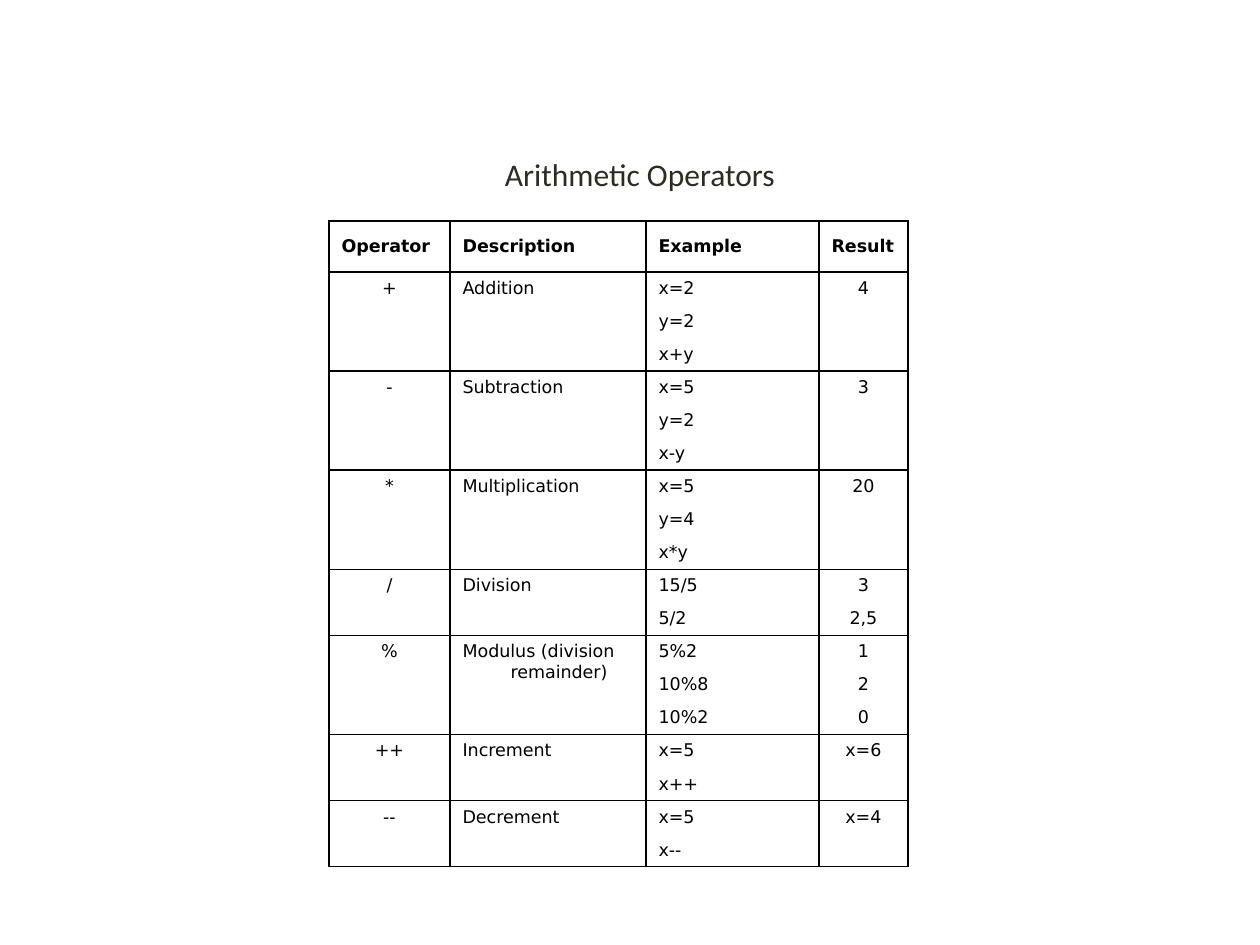
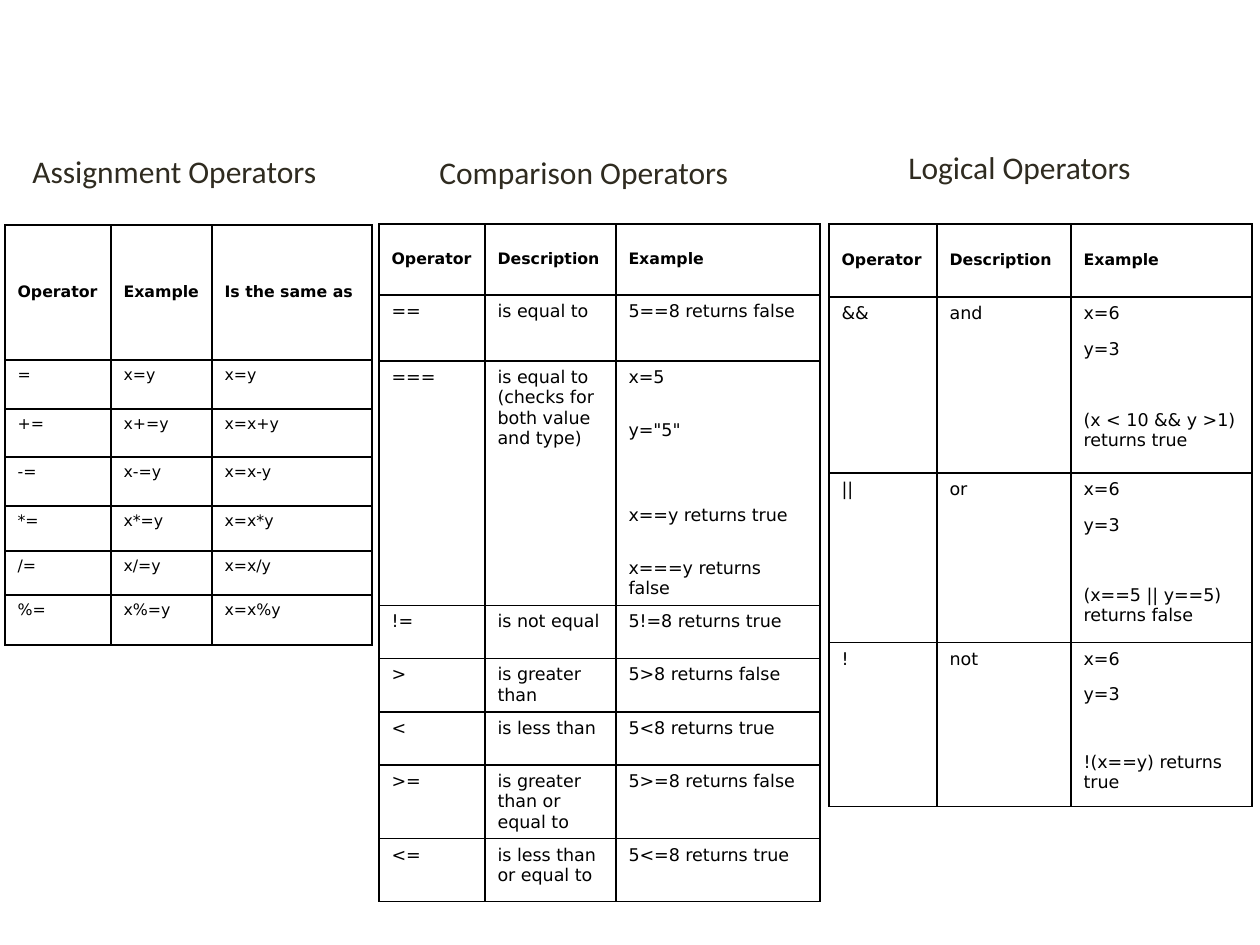
from dataclasses import dataclass

from lxml import etree
from pptx import Presentation
from pptx.dml.color import RGBColor
from pptx.enum.text import MSO_ANCHOR, MSO_AUTO_SIZE, PP_ALIGN
from pptx.oxml.ns import qn
from pptx.util import Emu, Pt

CENTER, LEFT = PP_ALIGN.CENTER, PP_ALIGN.LEFT
MIDDLE, TOP = MSO_ANCHOR.MIDDLE, MSO_ANCHOR.TOP
NO_FIT, FIT_SHAPE = MSO_AUTO_SIZE.NONE, MSO_AUTO_SIZE.SHAPE_TO_FIT_TEXT

COLORS = {"heading": "2F2B20", "text": "000000", "border": "000000", "cell": "FFFFFF"}
HEADING_FONT, TABLE_FONT = "Calibri", "DejaVu Sans"
HEADING_SIZE = 18
PX_PER_INCH = 126
HANGING_INDENT = 48
TITLE_ONLY, BLANK = 5, 6


def px(length: int) -> Emu:
    return Emu(round(length * 914400 / PX_PER_INCH))


@dataclass(frozen=True)
class Heading:
    text: str
    left: int
    top: int
    width: int
    height: int = 50


@dataclass(frozen=True)
class Entry:
    """One operator: a column with a single text spans all its rows."""
    heights: tuple[int, ...]
    columns: tuple[tuple[str, ...], ...]


@dataclass(frozen=True)
class OperatorTable:
    left: int
    top: int
    widths: tuple[int, ...]
    header_height: int
    headers: tuple[str, ...]
    entries: tuple[Entry, ...]
    header_size: int = 9
    body_size: int = 10
    centered: tuple[int, ...] = ()


# Content: arithmetic
def arithmetic(operator: str, description: str, examples: str, results: str) -> Entry:
    lines = tuple(examples.split())
    return Entry((33,) * len(lines),
                 ((operator,), (description,), lines, tuple(results.split())))


ARITHMETIC_TITLE = Heading("Arithmetic Operators", 73, 145, 1134, 57)
ARITHMETIC = OperatorTable(
    329, 221, (121, 196, 173, 89), 51,
    ("Operator", "Description", "Example", "Result"),
    (
        arithmetic("+", "Addition", "x=2 y=2 x+y", "4"),
        arithmetic("-", "Subtraction", "x=5 y=2 x-y", "3"),
        arithmetic("*", "Multiplication", "x=5 y=4 x*y", "20"),
        arithmetic("/", "Division", "15/5 5/2", "3 2,5"),
        arithmetic("%", "Modulus (division remainder)", "5%2 10%8 10%2", "1 2 0"),
        arithmetic("++", "Increment", "x=5 x++", "x=6"),
        arithmetic("--", "Decrement", "x=5 x--", "x=4"),
    ),
    header_size=10, centered=(0, 3),
)

# Content: logical, comparison and assignment
LOGICAL = OperatorTable(
    829, 224, (108, 134, 181), 73,
    ("Operator", "Description", "Example"),
    (
        Entry((36, 36, 35, 69), (("&&",), ("and",), (
            "x=6", "y=3", "", "(x < 10 && y >1)\nreturns true"))),
        Entry((36, 35, 35, 64), (("||",), ("or",), (
            "x=6", "y=3", "", "(x==5 || y==5)\nreturns false"))),
        Entry((35, 35, 33, 61), (("!",), ("not",), (
            "x=6", "y=3", "", "!(x==y) returns\ntrue"))),
    ),
)


def comparison(height: int, operator: str, description: str, example: str) -> Entry:
    return Entry((height,), ((operator,), (description,), (example,)))


COMPARISON = OperatorTable(
    379, 224, (106, 131, 204), 71,
    ("Operator", "Description", "Example"),
    (
        comparison(66, "==", "is equal to", "5==8 returns false"),
        Entry((53, 52, 33, 53, 53), (
            ("===",),
            ("is equal to\n(checks for\nboth value\nand type)",),
            ("x=5", 'y="5"', "", "x==y returns true", "x===y returns\nfalse"))),
        comparison(53, "!=", "is not equal", "5!=8 returns true"),
        comparison(52, ">", "is greater\nthan", "5>8 returns false"),
        comparison(53, "<", "is less than", "5<8 returns true"),
        comparison(74, ">=", "is greater\nthan or\nequal to", "5>=8 returns false"),
        comparison(63, "<=", "is less than\nor equal to", "5<=8 returns true"),
    ),
)

ASSIGNMENT = OperatorTable(
    5, 225, (106, 101, 160), 135,
    ("Operator", "Example", "Is the same as"),
    (Entry((49,), (("=",), ("x=y",), ("x=y",))),)
    + tuple(
        Entry((height,), ((f"{sign}=",), (f"x{sign}=y",), (f"x=x{sign}y",)))
        for sign, height in zip("+-*/%", (48, 49, 45, 44, 50))
    ),
    body_size=9,
)

HEADINGS = (
    Heading("Assignment Operators", 20, 146, 318),
    Heading("Comparison Operators", 427, 147, 318),
    Heading("Logical Operators", 896, 142, 249),
)


# Shared drawing
def write_heading(shape, heading: Heading, align: PP_ALIGN) -> None:
    shape.left, shape.top = px(heading.left), px(heading.top)
    shape.width, shape.height = px(heading.width), px(heading.height)
    shape.text_frame.text = heading.text
    paragraph = shape.text_frame.paragraphs[0]
    paragraph.alignment = align
    paragraph.font.name = HEADING_FONT
    paragraph.font.size = Pt(HEADING_SIZE)
    paragraph.font.color.rgb = RGBColor.from_string(COLORS["heading"])


def add_heading(slide, heading: Heading) -> None:
    box = slide.shapes.add_textbox(0, 0, 0, 0)
    write_heading(box, heading, LEFT)
    box.text_frame.word_wrap = False
    box.text_frame.auto_size = FIT_SHAPE


def style_cell(cell, sides: str) -> None:
    properties = cell._tc.get_or_add_tcPr()
    for side in "LRTB":
        line = etree.SubElement(properties, qn(f"a:ln{side}"), w=str(Pt(1)))
        if side in sides:
            fill = etree.SubElement(line, qn("a:solidFill"))
            etree.SubElement(fill, qn("a:srgbClr"), val=COLORS["border"])
        else:
            etree.SubElement(line, qn("a:noFill"))
    cell.fill.solid()
    cell.fill.fore_color.rgb = RGBColor.from_string(COLORS["cell"])


def write_cell(cell, text: str, size: int, bold: bool, align: PP_ALIGN) -> None:
    cell.text = text
    cell.vertical_anchor = MIDDLE if bold else TOP
    for paragraph in cell.text_frame.paragraphs:
        paragraph.alignment = align
        paragraph.font.name = TABLE_FONT
        paragraph.font.size = Pt(size)
        paragraph.font.bold = bold
        paragraph.font.color.rgb = RGBColor.from_string(COLORS["text"])
        indents = paragraph._p.get_or_add_pPr()
        indents.set("marL", str(px(HANGING_INDENT)))
        indents.set("indent", str(-px(HANGING_INDENT)))


def add_operator_table(slide, content: OperatorTable) -> None:
    header = Entry((content.header_height,), tuple((name,) for name in content.headers))
    entries = (header, *content.entries)
    heights = [height for entry in entries for height in entry.heights]
    table = slide.shapes.add_table(
        len(heights), len(content.widths), px(content.left), px(content.top),
        px(sum(content.widths)), px(sum(heights))).table
    table.first_row = table.horz_banding = False
    for column, width in zip(table.columns, content.widths):
        column.width = px(width)
    for row, height in zip(table.rows, heights):
        row.height = px(height)

    first = 0
    for entry in entries:
        is_header = entry is header
        size = content.header_size if is_header else content.body_size
        last = first + len(entry.heights) - 1
        for column, texts in enumerate(entry.columns):
            spans = len(texts) == 1
            for row in range(first, last + 1):
                sides = "LR"
                if row == first:
                    sides += "T"
                if row == last or (spans and row == first):
                    sides += "B"
                style_cell(table.cell(row, column), sides)
            centered = column in content.centered and not is_header
            for offset, text in enumerate(texts):
                write_cell(table.cell(first + offset, column), text, size, is_header,
                           CENTER if centered else LEFT)
            if spans and last > first:
                table.cell(first, column).merge(table.cell(last, column))
        first = last + 1


def main() -> None:
    deck = Presentation()
    deck.slide_width, deck.slide_height = px(1260), px(945)

    # Arithmetic operators
    slide = deck.slides.add_slide(deck.slide_layouts[TITLE_ONLY])
    title = slide.shapes.title
    write_heading(title, ARITHMETIC_TITLE, CENTER)
    title.text_frame.vertical_anchor = MIDDLE
    title.text_frame.auto_size = NO_FIT
    add_operator_table(slide, ARITHMETIC)

    # Assignment, comparison and logical operators
    slide = deck.slides.add_slide(deck.slide_layouts[BLANK])
    for content in (LOGICAL, COMPARISON, ASSIGNMENT):
        add_operator_table(slide, content)
    for heading in HEADINGS:
        add_heading(slide, heading)

    deck.save("out.pptx")


if __name__ == "__main__":
    main()
